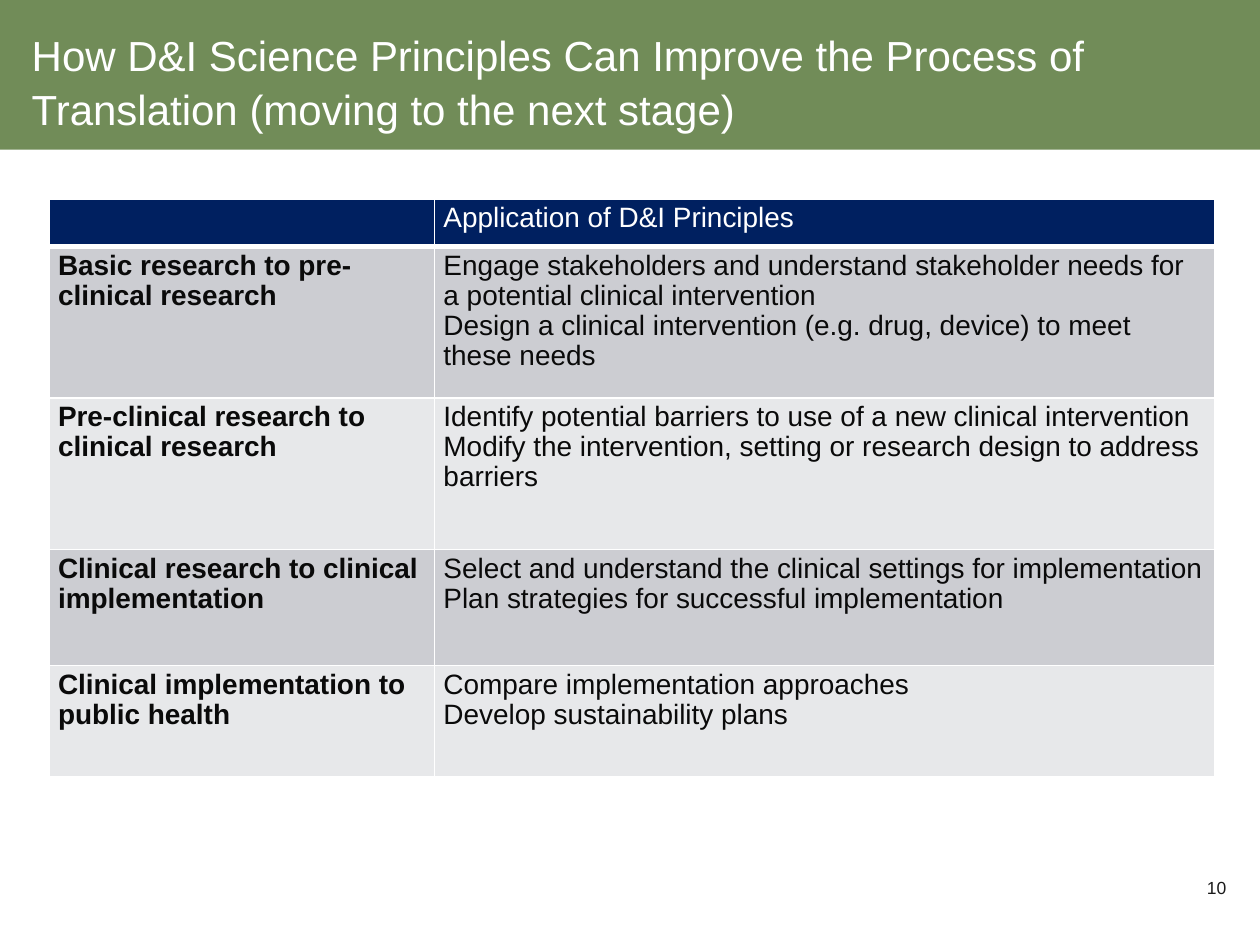
from lxml.etree import SubElement as Sub
from pptx import Presentation as Deck
from pptx.dml.color import RGBColor as Rgb
from pptx.enum.shapes import MSO_SHAPE as Kind
from pptx.enum.text import PP_ALIGN as Align
from pptx.oxml.ns import qn
from pptx.util import Cm, Pt

WHITE = Rgb(0xFF, 0xFF, 0xFF)
GREEN = Rgb(0x71, 0x8C, 0x58)
NAVY = Rgb(0x00, 0x20, 0x60)
INK = Rgb(0x0A, 0x0A, 0x0A)
GREY = Rgb(0x1A, 0x1A, 0x1A)
BANDS = Rgb(0xCC, 0xCD, 0xD2), Rgb(0xE7, 0xE8, 0xEA)

TITLE = ("How D&I Science Principles Can Improve the Process of "
         "Translation (moving to the next stage)")
HEAD = "Application of D&I Principles"
STAGES = [
    ("Basic research to pre-clinical research",
     ["Engage stakeholders and understand stakeholder needs for a potential clinical intervention",
      "Design a clinical intervention (e.g. drug, device) to meet these needs"]),
    ("Pre-clinical research to clinical research",
     ["Identify potential barriers to use of a new clinical intervention",
      "Modify the intervention, setting or research design to address barriers"]),
    ("Clinical research to clinical implementation",
     ["Select and understand the clinical settings for implementation",
      "Plan strategies for successful implementation"]),
    ("Clinical implementation to public health",
     ["Compare implementation approaches", "Develop sustainability plans"]),
]
COLS = 7.77, 15.72
ROWS = 0.91, 3.05, 3.05, 2.34, 2.24


def write(frame, lines, size=16, color=INK, bold=False, align=Align.LEFT, space=0.96):
    """Fill a text frame with one paragraph per line."""
    for i, line in enumerate(lines):
        para = frame.add_paragraph() if i else frame.paragraphs[0]
        para.alignment, para.line_spacing = align, space
        run = para.add_run()
        run.text = line
        font = run.font
        font.name, font.size, font.bold = "Arial", Pt(size), bold
        font.color.rgb = color


def label(slide, lines, box, pad=0, wrap=True, **form):
    """Add a text box with no side margins."""
    frame = slide.shapes.add_textbox(*map(Cm, box)).text_frame
    frame.word_wrap = wrap
    frame.margin_left = frame.margin_right = 0
    frame.margin_top = frame.margin_bottom = Cm(pad)
    write(frame, lines, **form)


def banner(slide):
    """Draw the green band behind the title."""
    band = slide.shapes.add_shape(Kind.RECTANGLE, 0, 0, Cm(25.4), Cm(3.02))
    band.shadow.inherit = False
    band.fill.solid()
    band.fill.fore_color.rgb = GREEN
    band.line.fill.background()


def edge(cell, side, width):
    """Give one side of a cell a white border."""
    line = Sub(cell._tc.get_or_add_tcPr(), qn(f"a:ln{side}"), w=str(Pt(width)))
    Sub(Sub(line, qn("a:solidFill")), qn("a:srgbClr"), val=str(WHITE))


def paint(cell, lines, fill, top=1, base=1, **form):
    """Set the borders, fill, margins and text of a cell."""
    for side, width in zip("LRTB", (1, 1, top, base)):
        edge(cell, side, width)
    cell.fill.solid()
    cell.fill.fore_color.rgb = fill
    cell.margin_left = cell.margin_right = Cm(0.18)
    cell.margin_top = cell.margin_bottom = Cm(0.1)
    write(cell.text_frame, lines, **form)


def grid(slide):
    """Build the table of stages and principles."""
    box = map(Cm, (0.99, 4.01, sum(COLS), sum(ROWS)))
    table = slide.shapes.add_table(len(ROWS), len(COLS), *box).table
    for col, width in zip(table.columns, COLS):
        col.width = Cm(width)
    for row, height in zip(table.rows, ROWS):
        row.height = Cm(height)
    for i, lines in enumerate(([], [HEAD])):
        paint(table.cell(0, i), lines, NAVY, base=3, color=WHITE)
    for i, (stage, uses) in enumerate(STAGES, 1):
        fill, top = BANDS[(i - 1) % 2], 3 if i == 1 else 1
        paint(table.cell(i, 0), [stage], fill, top, bold=True)
        paint(table.cell(i, 1), uses, fill, top)


def main():
    """Build the slide and save it."""
    deck = Deck()
    deck.slide_width, deck.slide_height = Cm(25.4), Cm(19.05)
    slide = deck.slides.add_slide(deck.slide_layouts[6])
    label(slide, ["10"], (24.26, 17.68, 0.46, 0.56), wrap=False,
          size=10, color=GREY, align=Align.RIGHT, space=1.0)
    grid(slide)
    banner(slide)
    label(slide, [TITLE], (0.64, 0.41, 25.1, 2.62), pad=0.13,
          size=24, color=WHITE, space=1.06)
    deck.save("out.pptx")


if __name__ == "__main__":
    main()
